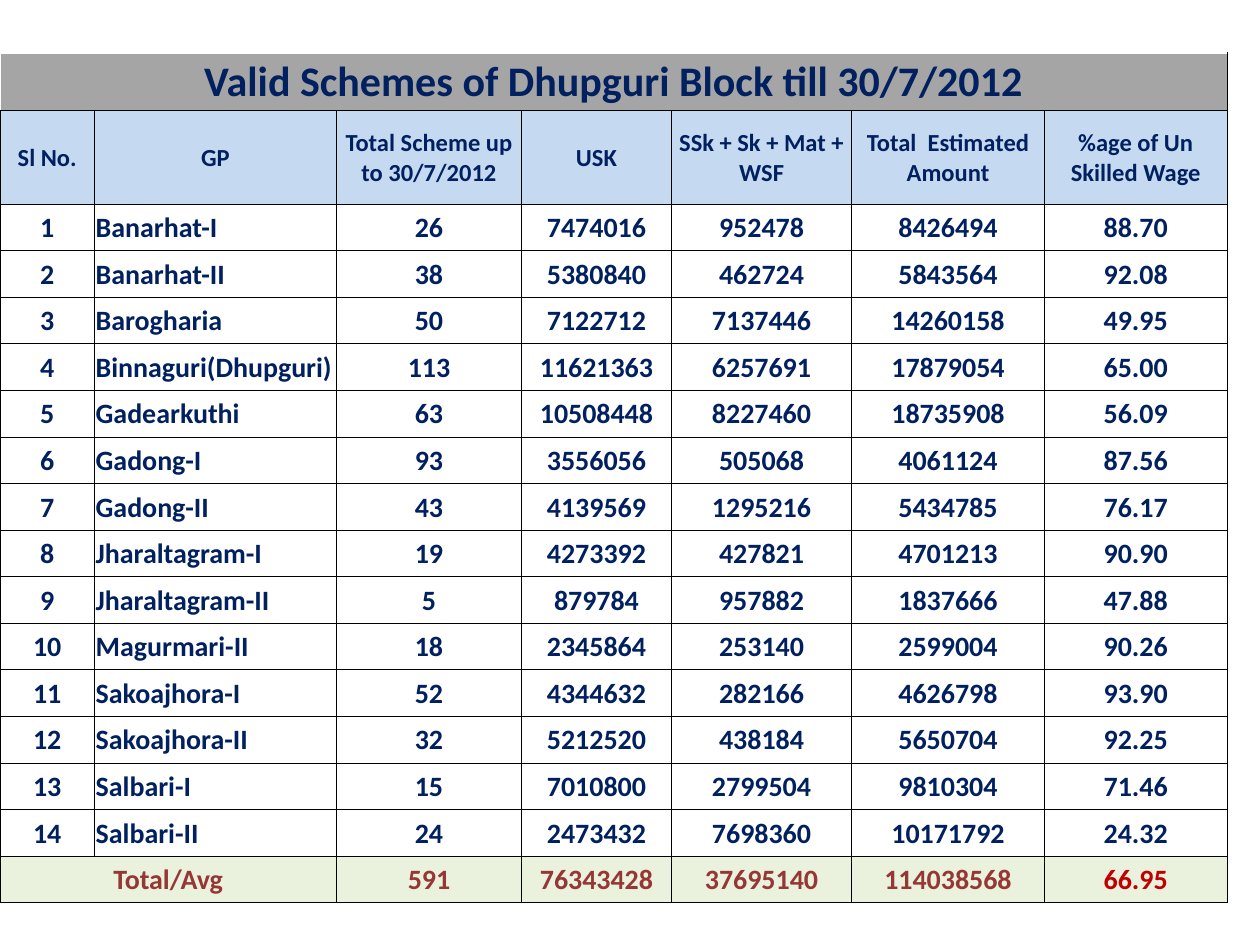
from lxml.etree import SubElement
from pptx import Presentation
from pptx.dml.color import RGBColor
from pptx.enum.text import MSO_ANCHOR as Anchor, PP_ALIGN as Align
from pptx.oxml.ns import qn
from pptx.util import Inches, Pt

COLORS = {
    "navy": "002060", "brown": "953735", "red": "C00000", "black": "000000",
    "title": "A5A5A5", "header": "C5D9F1", "total": "EAF1DD",
}
COLUMN_WIDTHS = [0.75, 1.92, 1.47, 1.19, 1.43, 1.53, 1.45]
TITLE_HEIGHT, HEADER_HEIGHT, ROW_HEIGHT = 0.46, 0.74, 0.37
TITLE = "Valid Schemes of Dhupguri Block till 30/7/2012"
HEADERS = ["Sl No.", "GP", "Total Scheme up to 30/7/2012", "USK",
           "SSk + Sk + Mat + WSF", "Total  Estimated Amount",
           "%age of Un Skilled Wage"]
SCHEMES = [
    ("Banarhat-I", 26, 7474016, 952478, 8426494, "88.70"),
    ("Banarhat-II", 38, 5380840, 462724, 5843564, "92.08"),
    ("Barogharia", 50, 7122712, 7137446, 14260158, "49.95"),
    ("Binnaguri(Dhupguri)", 113, 11621363, 6257691, 17879054, "65.00"),
    ("Gadearkuthi", 63, 10508448, 8227460, 18735908, "56.09"),
    ("Gadong-I", 93, 3556056, 505068, 4061124, "87.56"),
    ("Gadong-II", 43, 4139569, 1295216, 5434785, "76.17"),
    ("Jharaltagram-I", 19, 4273392, 427821, 4701213, "90.90"),
    ("Jharaltagram-II", 5, 879784, 957882, 1837666, "47.88"),
    ("Magurmari-II", 18, 2345864, 253140, 2599004, "90.26"),
    ("Sakoajhora-I", 52, 4344632, 282166, 4626798, "93.90"),
    ("Sakoajhora-II", 32, 5212520, 438184, 5650704, "92.25"),
    ("Salbari-I", 15, 7010800, 2799504, 9810304, "71.46"),
    ("Salbari-II", 24, 2473432, 7698360, 10171792, "24.32"),
]
TOTALS = ["Total/Avg", None, 591, 76343428, 37695140, 114038568, "66.95"]


class SlideBuilder:
    font = "Calibri"
    border_width = 0.5

    def __init__(self, slide):
        self.slide = slide

    def table(self, left, top, widths, heights):
        frame = self.slide.shapes.add_table(
            len(heights), len(widths), Inches(left), Inches(top),
            Inches(sum(widths)), Inches(sum(heights)))
        table = frame.table
        table.first_row = table.horz_banding = False
        for column, width in zip(table.columns, widths):
            column.width = Inches(width)
        for row, height in zip(table.rows, heights):
            row.height = Inches(height)
        return table

    def borders(self, cell, sides):
        """Draw the given sides, named by the letters L, R, T and B in that order."""
        properties = cell._tc.get_or_add_tcPr()
        for side in sides:
            line = SubElement(properties, qn(f"a:ln{side}"),
                              w=str(Pt(self.border_width)))
            fill = SubElement(line, qn("a:solidFill"))
            SubElement(fill, qn("a:srgbClr"), val=COLORS["black"])

    def cell(self, cell, text, size=16, color="navy", fill=None,
             align=Align.CENTER, sides="LRTB"):
        self.borders(cell, sides)
        if fill:
            cell.fill.solid()
            cell.fill.fore_color.rgb = RGBColor.from_string(COLORS[fill])
        else:
            cell.fill.background()
        cell.vertical_anchor = Anchor.MIDDLE
        cell.margin_left = cell.margin_right = cell.margin_top = Inches(0.01)
        cell.margin_bottom = 0
        if text is None:
            return
        para = cell.text_frame.paragraphs[0]
        para.alignment = align
        span = para.add_run()
        span.text = str(text)
        span.font.name = self.font
        span.font.size = Pt(size)
        span.font.bold = True
        span.font.color.rgb = RGBColor.from_string(COLORS[color])

    def row(self, table, index, values, **style):
        for column, value in enumerate(values):
            self.cell(table.cell(index, column), value, **style)


def main():
    deck = Presentation()
    deck.slide_width, deck.slide_height = Inches(10), Inches(7.5)
    builder = SlideBuilder(deck.slides.add_slide(deck.slide_layouts[6]))

    heights = [TITLE_HEIGHT, HEADER_HEIGHT] + [ROW_HEIGHT] * (len(SCHEMES) + 1)
    table = builder.table(0, 0.42, COLUMN_WIDTHS, heights)
    last_row, last_column = len(heights) - 1, len(COLUMN_WIDTHS) - 1
    table.cell(0, 0).merge(table.cell(0, last_column))
    table.cell(last_row, 0).merge(table.cell(last_row, 1))

    builder.row(table, 0, [TITLE] + [None] * last_column,
                size=24, fill="title", sides="RB")
    builder.row(table, 1, HEADERS, size=14, fill="header")
    for number, scheme in enumerate(SCHEMES, start=1):
        for column, value in enumerate((number, *scheme)):
            builder.cell(table.cell(number + 1, column), value,
                         align=Align.LEFT if column == 1 else Align.CENTER)
    builder.row(table, last_row, TOTALS[:-1], color="brown", fill="total")
    builder.cell(table.cell(last_row, last_column), TOTALS[-1],
                 color="red", fill="total")

    deck.save("out.pptx")


if __name__ == "__main__":
    main()
